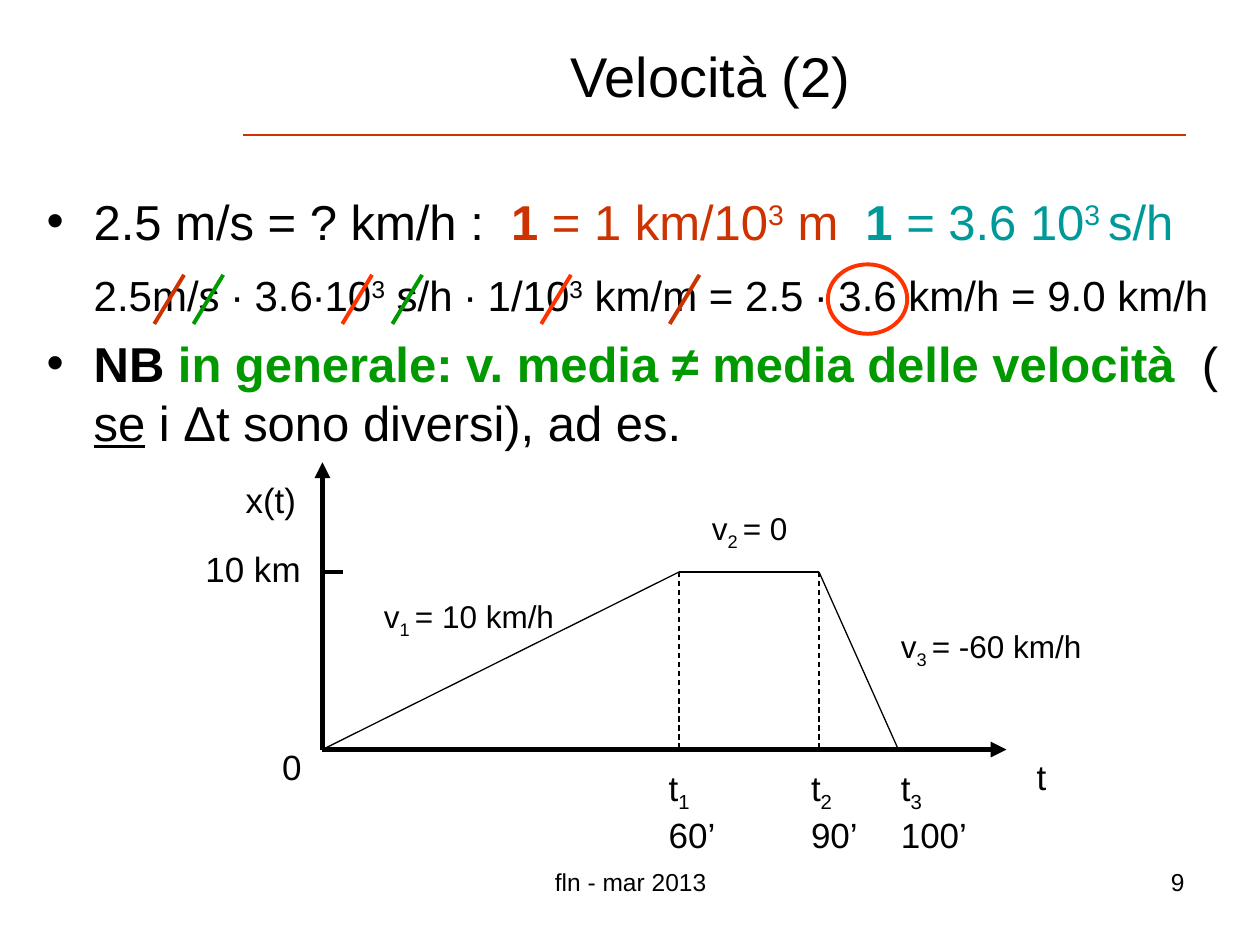
from dataclasses import dataclass

from lxml import etree
from pptx import Presentation
from pptx import util as u
from pptx.dml.color import RGBColor
from pptx.enum import dml, shapes, text
from pptx.oxml.ns import qn


@dataclass(frozen=True)
class Theme:
    font: str = "Arial"
    black: str = "000000"
    rust: str = "CC3300"
    red: str = "FF3300"
    green: str = "009900"
    teal: str = "009999"
    title: int = 32
    body: int = 28
    sum: int = 24
    axis: int = 20
    speed: int = 18
    foot: int = 14
    thin: float = 0.75
    mid: float = 2.25
    thick: float = 3
    sup: int = 30
    sub: int = -25


T = Theme()
LEFT, MID, RIGHT = text.PP_ALIGN.LEFT, text.PP_ALIGN.CENTER, text.PP_ALIGN.RIGHT


def add_runs(para, spans, size):
    for words, style in spans:
        run = para.add_run()
        run.text = words
        font = run.font
        font.name = T.font
        font.size = u.Pt(style.get("size", size))
        font.bold = style.get("bold", False)
        font.underline = style.get("under", False)
        font.color.rgb = RGBColor.from_string(style.get("color", T.black))
        if "base" in style:
            run._r.get_or_add_rPr().set("baseline", str(style["base"] * 1000))


def add_text(slide, area, lines, size, align=LEFT, wrap=True, fit=False):
    box = slide.shapes.add_textbox(*map(u.Cm, area))
    frame = box.text_frame
    frame.word_wrap = wrap
    if fit:
        frame.auto_size = text.MSO_AUTO_SIZE.SHAPE_TO_FIT_TEXT
    for i, spans in enumerate(lines):
        para = frame.add_paragraph() if i else frame.paragraphs[0]
        para.alignment = align
        add_runs(para, spans, size)
    return frame


def add_line(slide, start, end, color=T.black, width=T.thin, arrow=False, dash=False):
    line = slide.shapes.add_connector(
        shapes.MSO_CONNECTOR.STRAIGHT, *map(u.Cm, (*start, *end)))
    line.line.color.rgb = RGBColor.from_string(color)
    line.line.width = u.Pt(width)
    if dash:
        line.line.dash_style = dml.MSO_LINE.DASH
    if arrow:
        etree.SubElement(line.line._get_or_add_ln(), qn("a:tailEnd"), type="triangle")
    etree.SubElement(line._element.spPr, qn("a:effectLst"))


def add_ring(slide, area):
    ring = slide.shapes.add_shape(shapes.MSO_SHAPE.OVAL, *map(u.Cm, area))
    ring.shadow.inherit = False
    ring.fill.background()
    ring.line.color.rgb = RGBColor.from_string(T.red)
    ring.line.width = u.Pt(T.mid)


def add_body(slide):
    rust, teal, green = ({"color": c} for c in (T.rust, T.teal, T.green))
    bold, sup = {"bold": True}, {"base": T.sup}
    small = {"size": T.sum}
    lines = [
        [("2.5 m/s = ? km/h :  ", {}), ("1", rust | bold), (" = 1 km/10", rust),
         ("3", rust | sup), (" m  ", rust), ("1", teal | bold),
         (" = 3.6 10", teal), ("3 ", teal | sup), ("s/h", teal)],
        [("\t", {}), ("2.5m/s ∙ 3.6∙10", small), ("3", small | sup),
         (" s/h ∙ 1/10", small), ("3", small | sup),
         (" km/m = 2.5 ∙ 3.6 km/h = 9.0 km/h", small)],
        [("NB", bold), (" in generale: v. media ≠ media delle velocità", green | bold),
         ("  ( ", {}), ("se", {"under": True}), (" i Δt sono diversi), ad es.", {})],
    ]
    frame = add_text(slide, (0.69, 3.73, 24.2, 13.28), lines, T.body)
    for i, para in enumerate(frame.paragraphs):
        props = para._p.get_or_add_pPr()
        props.set("marL", str(u.Cm(0.95)))
        props.set("indent", str(u.Cm(-0.95)))
        if i:
            para.space_before = u.Pt(7)
        if i != 1:
            etree.SubElement(props, qn("a:buFont"), typeface=T.font)
            etree.SubElement(props, qn("a:buChar"), char="•")


def add_strikes(slide):
    for x, color in ((3.71, T.rust), (4.5, T.green), (8.51, T.green),
                     (7.5, T.red), (11.51, T.red), (14.1, T.rust)):
        add_line(slide, (x, 5.54), (x - 0.6, 6.53), color, T.mid)
    add_ring(slide, (16.69, 5.33, 1.6, 1.4))


def add_graph(slide):
    left, base, top = 6.5, 15.11, 11.53
    zero = (left, base)
    marks = (13.69, 16.51, 18.11)
    add_line(slide, zero, (left, 9.32), width=T.thick, arrow=True)
    add_line(slide, zero, (20.29, base), width=T.thick, arrow=True)
    add_line(slide, (left, top), (left + 0.41, top), width=T.mid)
    track = [zero, (marks[0], top), (marks[1], top), (marks[2], base)]
    for start, end in zip(track, track[1:]):
        add_line(slide, start, end)
    for x in marks[:2]:
        add_line(slide, (x, top), (x, base), dash=True)

    for words, x, y, width in (("x(t)", 4.7, 9.53, 1.52), ("t", 20.65, 15.11, 0.71),
                               ("0", 5.44, 14.91, 0.91), ("10 km", 3.89, 10.92, 2.44)):
        add_text(slide, (x, y, width, 1.09), [[(words, {})]], T.axis, wrap=False, fit=True)
    sub = {"base": T.sub}
    for num, time, x, width in (("1", "60’", 13.23, 1.45), ("2", "90’", 16.1, 1.45),
                                ("3", "100’", 17.91, 1.85)):
        lines = [[("t", {}), (num, sub)], [(time, {})]]
        add_text(slide, (x, 15.32, width, 1.96), lines, T.axis, wrap=False, fit=True)
    for num, value, x, y, width in (("1 ", "= 10 km/h", 7.49, 11.91, 3.99),
                                    ("2 ", "= 0", 14.1, 10.13, 2.21),
                                    ("3 ", "= -60 km/h", 17.91, 12.52, 4.6)):
        lines = [[("v", {}), (num, sub), (value, {})]]
        add_text(slide, (x, y, width, 1.02), lines, T.speed, fit=True)


def main():
    deck = Presentation()
    deck.slide_width, deck.slide_height = u.Cm(25.4), u.Cm(19.05)
    slide = deck.slides.add_slide(deck.slide_layouts[6])
    add_line(slide, (4.9, 2.72), (23.9, 2.72), T.rust)
    add_text(slide, (8.69, 17.35, 8.05, 1.32), [[("fln - mar 2013", {})]], T.foot, MID)
    add_text(slide, (18.21, 17.35, 5.92, 1.32), [[("9", {})]], T.foot, RIGHT)
    title = add_text(slide, (4.7, 0.71, 19.25, 1.6), [[("Velocità (2)", {})]], T.title, MID)
    title.vertical_anchor = text.MSO_ANCHOR.MIDDLE
    add_body(slide)
    add_strikes(slide)
    add_graph(slide)
    deck.save("out.pptx")


if __name__ == "__main__":
    main()
